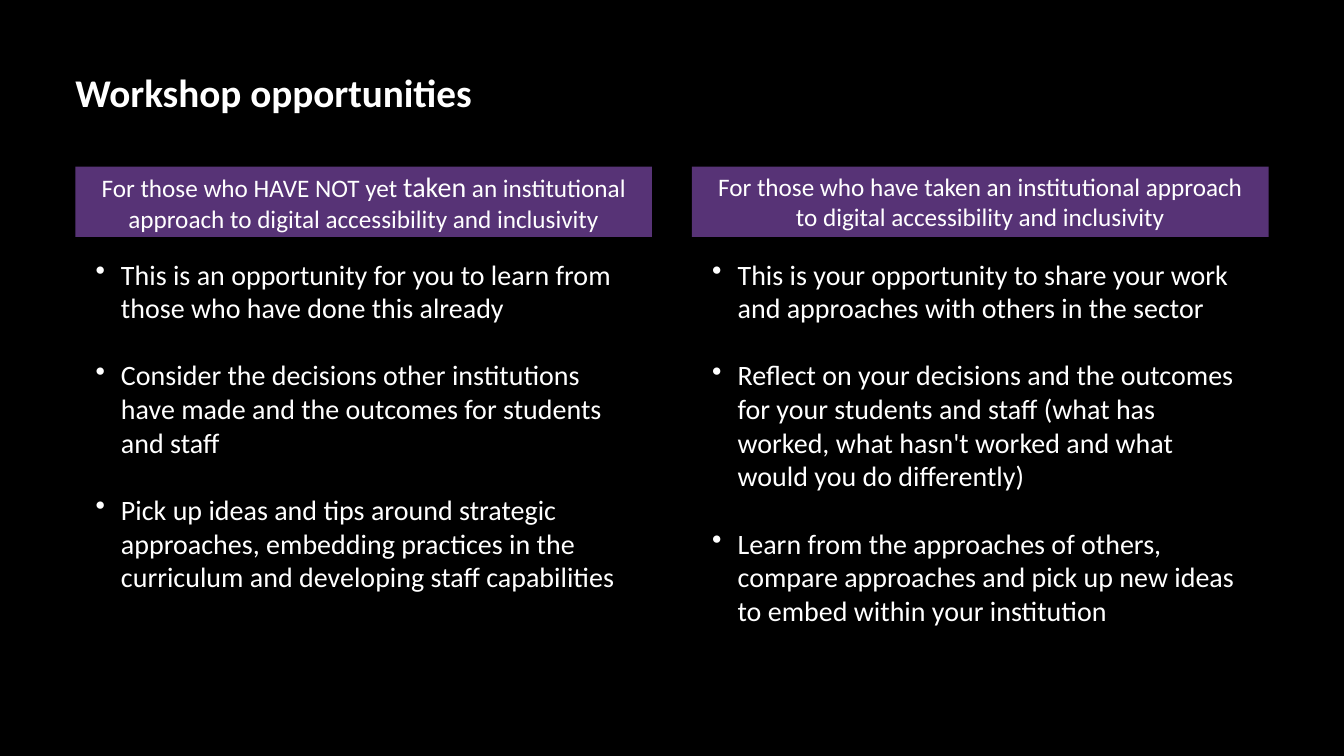
from lxml.etree import SubElement
from pptx import Presentation
from pptx.dml.color import RGBColor as Color
from pptx.enum.shapes import MSO_SHAPE as Shape
from pptx.enum.text import MSO_ANCHOR as Anchor, PP_ALIGN as Align
from pptx.oxml.ns import qn
from pptx.util import Cm, Pt

COLORS = {"background": "000000", "heading": "573376", "text": "FFFFFF"}
LEFT, COLUMN_WIDTH, COLUMN_STEP = 1.9, 14.53, 15.54
HEADING_TOP, HEADING_HEIGHT, LIST_HEIGHT = 4.2, 1.77, 11.18

COLUMNS = [
    (
        [("For those who HAVE NOT yet ", 18), ("taken", 20),
         (" an institutional approach to digital accessibility and inclusivity", 18)],
        ["This is an opportunity for you to learn from those who have done this already",
         "Consider the decisions other institutions have made and the outcomes for students and staff",
         "Pick up ideas and tips around strategic approaches, embedding practices in the "
         "curriculum and developing staff capabilities"],
    ),
    (
        [("For those who have taken an institutional approach to digital accessibility "
          "and inclusivity", 18)],
        ["This is your opportunity to share your work and approaches with others in the sector",
         "Reflect on your decisions and the outcomes for your students and staff "
         "(what has worked, what hasn't worked and what would you do differently)",
         "Learn from the approaches of others, compare approaches and pick up new ideas "
         "to embed within your institution"],
    ),
]


def set_frame(box, inset, anchor):
    frame = box.text_frame
    frame.word_wrap = True
    frame.vertical_anchor = anchor
    frame.margin_left = frame.margin_right = Cm(inset)
    frame.margin_top = frame.margin_bottom = Cm(inset)
    return frame


def set_font(para, size, bold=False):
    para.font.name = "Calibri"
    para.font.size = Pt(size)
    para.font.bold = bold
    para.font.color.rgb = Color.from_string(COLORS["text"])


deck = Presentation()
deck.slide_width, deck.slide_height = Cm(33.87), Cm(19.05)
page = deck.slides.add_slide(deck.slide_layouts[6])
page.background.fill.solid()
page.background.fill.fore_color.rgb = Color.from_string(COLORS["background"])

title = page.shapes.add_textbox(Cm(LEFT), Cm(0.81), Cm(30.06), Cm(2.11))
para = set_frame(title, 0, Anchor.BOTTOM).paragraphs[0]
para.text = "Workshop opportunities"
set_font(para, 28, bold=True)

for column, (heading_spans, points) in enumerate(COLUMNS):
    left = Cm(LEFT + column * COLUMN_STEP)

    heading = page.shapes.add_shape(
        Shape.RECTANGLE, left, Cm(HEADING_TOP), Cm(COLUMN_WIDTH), Cm(HEADING_HEIGHT))
    heading.shadow.inherit = False
    heading.fill.solid()
    heading.fill.fore_color.rgb = Color.from_string(COLORS["heading"])
    heading.line.fill.background()
    para = set_frame(heading, 0.51, Anchor.MIDDLE).paragraphs[0]
    para.alignment = Align.CENTER
    set_font(para, 18)
    for text, size in heading_spans:
        span = para.add_run()
        span.text = text
        span.font.size = Pt(size)
        span.font.color.rgb = Color.from_string(COLORS["text"])

    box = page.shapes.add_textbox(
        left, Cm(HEADING_TOP + HEADING_HEIGHT), Cm(COLUMN_WIDTH), Cm(LIST_HEIGHT))
    frame = set_frame(box, 0.51, Anchor.TOP)
    for index, point in enumerate(points):
        para = frame.add_paragraph() if index else frame.paragraphs[0]
        para.text = point
        para.space_after = Pt(24)
        set_font(para, 20)
        properties = para._p.get_or_add_pPr()
        properties.set("marL", str(Cm(0.64)))
        properties.set("indent", str(-Cm(0.64)))
        bullet = SubElement(properties, qn("a:buChar"), char="•")
        properties.find(qn("a:defRPr")).addprevious(bullet)

deck.save("out.pptx")
